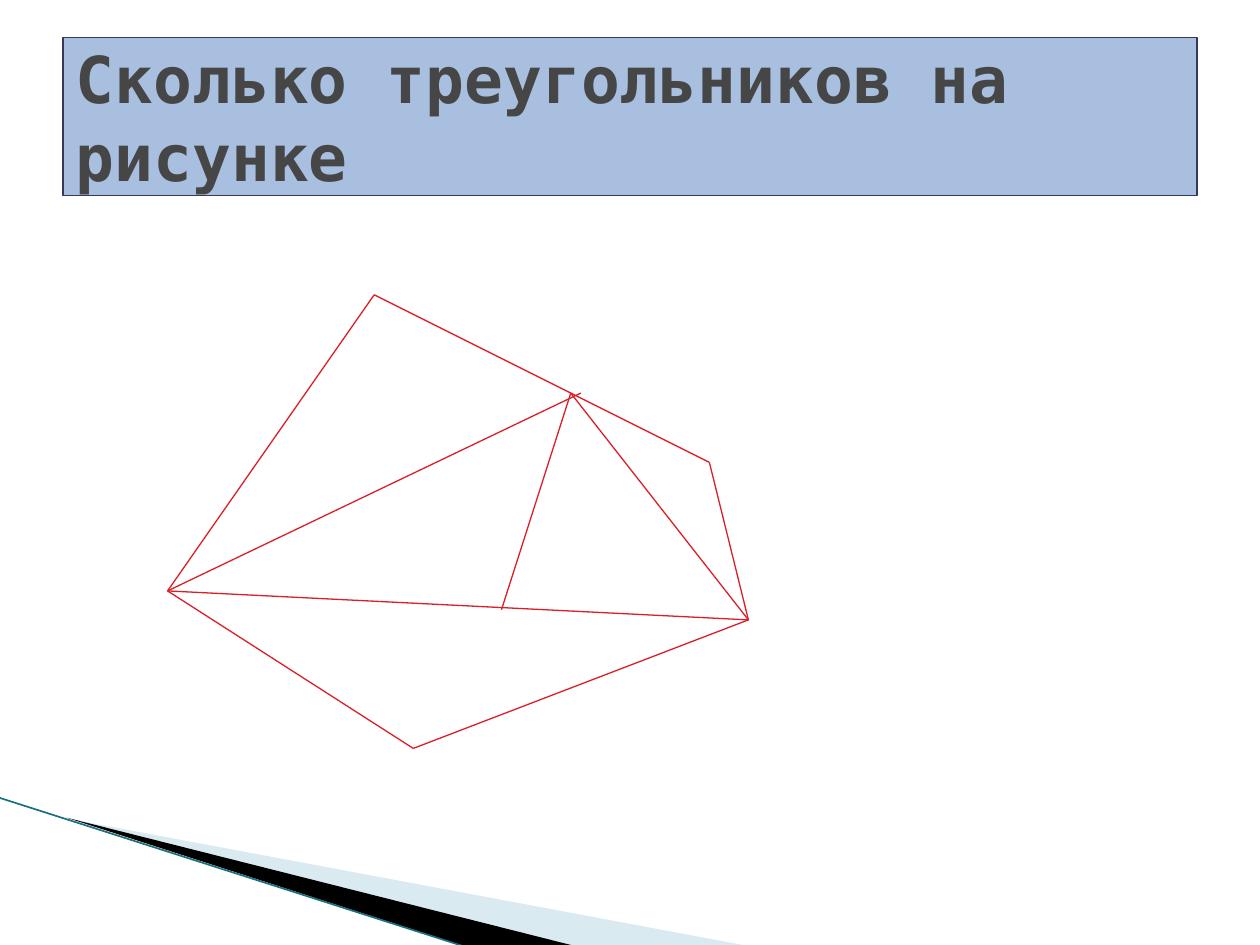
"""Build the slide that asks how many triangles the figure holds."""
import itertools
from dataclasses import dataclass

import lxml.etree
import pptx
import pptx.dml.color
import pptx.enum.shapes
import pptx.enum.text
import pptx.oxml.ns
import pptx.util

Inches = pptx.util.Inches
Point = tuple[float, float]

COLORS = {
    "banner": "A8BFDF",
    "banner_edge": "35385A",
    "title": "464646",
    "figure": "DA1F28",
    "pale_wedge": "A0CBDC",
    "dark_wedge": "000000",
    "wedge_edge": "1A7080",
}


@dataclass
class Segment:
    start: Point
    end: Point
    color: str = "figure"
    width: float = 0.75


@dataclass
class Wedge:
    corners: list[Point]
    color: str
    opacity: int = 100


def rgb(name: str) -> pptx.dml.color.RGBColor:
    return pptx.dml.color.RGBColor.from_string(COLORS[name])


def draw_segment(slide, segment: Segment) -> None:
    ends = [Inches(value) for value in (*segment.start, *segment.end)]
    connector = slide.shapes.add_connector(
        pptx.enum.shapes.MSO_CONNECTOR.STRAIGHT, *ends
    )
    connector.line.color.rgb = rgb(segment.color)
    connector.line.width = pptx.util.Pt(segment.width)
    properties = connector._element.spPr
    lxml.etree.SubElement(properties, pptx.oxml.ns.qn("a:effectLst"))


def draw_wedge(slide, wedge: Wedge) -> None:
    first, *others = [(Inches(x), Inches(y)) for x, y in wedge.corners]
    builder = slide.shapes.build_freeform(*first)
    builder.add_line_segments(others, close=True)
    shape = builder.convert_to_shape()
    shape.shadow.inherit = False
    shape.line.fill.background()
    shape.fill.solid()
    shape.fill.fore_color.rgb = rgb(wedge.color)
    if wedge.opacity < 100:
        color = shape._element.spPr.find(".//" + pptx.oxml.ns.qn("a:srgbClr"))
        alpha = lxml.etree.SubElement(color, pptx.oxml.ns.qn("a:alpha"))
        alpha.set("val", str(wedge.opacity * 1000))


def format_title(title, text: str) -> None:
    place = {"left": 0.5, "top": 0.3, "width": 9, "height": 1.25}
    for name, value in place.items():
        setattr(title, name, Inches(value))
    title.fill.solid()
    title.fill.fore_color.rgb = rgb("banner")
    title.line.color.rgb = rgb("banner_edge")
    title.line.width = pptx.util.Pt(0.75)

    frame = title.text_frame
    frame.text = text
    frame_format = {
        "word_wrap": True,
        "auto_size": pptx.enum.text.MSO_AUTO_SIZE.NONE,
        "vertical_anchor": pptx.enum.text.MSO_ANCHOR.MIDDLE,
    }
    for name, value in frame_format.items():
        setattr(frame, name, value)

    paragraph = frame.paragraphs[0]
    paragraph.alignment = pptx.enum.text.PP_ALIGN.LEFT
    font = paragraph.runs[0].font
    font_format = {
        "name": "DejaVu Sans Mono",
        "size": pptx.util.Pt(36.9),
        "bold": True,
    }
    for name, value in font_format.items():
        setattr(font, name, value)
    font.color.rgb = rgb("title")


def main() -> None:
    presentation = pptx.Presentation()
    presentation.slide_width = Inches(10)
    presentation.slide_height = Inches(7.5)
    slide = presentation.slides.add_slide(presentation.slide_layouts[5])

    wedges = [
        Wedge([(0.55, 6.5), (5.95, 7.51), (4.56, 7.51)], "pale_wedge", 40),
        Wedge([(0.53, 6.49), (4.57, 7.51), (3.72, 7.52)], "dark_wedge"),
    ]
    for wedge in wedges:
        draw_wedge(slide, wedge)
    draw_segment(slide, Segment((-0.01, 6.33), (3.71, 7.52), "wedge_edge", 0.95))

    format_title(slide.shapes.title, "Сколько треугольников на рисунке")

    left, top, upper_right = (1.33, 4.69), (2.97, 2.34), (5.63, 3.67)
    right, bottom, apex = (5.94, 4.92), (3.28, 5.94), (4.53, 3.12)
    outline = [left, top, upper_right, right, bottom, left]
    inner_lines = [
        (left, (4.61, 3.12)),
        (apex, right),
        (right, left),
        (apex, (3.98, 4.84)),
    ]
    for start, end in itertools.chain(itertools.pairwise(outline), inner_lines):
        draw_segment(slide, Segment(start, end))

    presentation.save("out.pptx")


if __name__ == "__main__":
    main()
